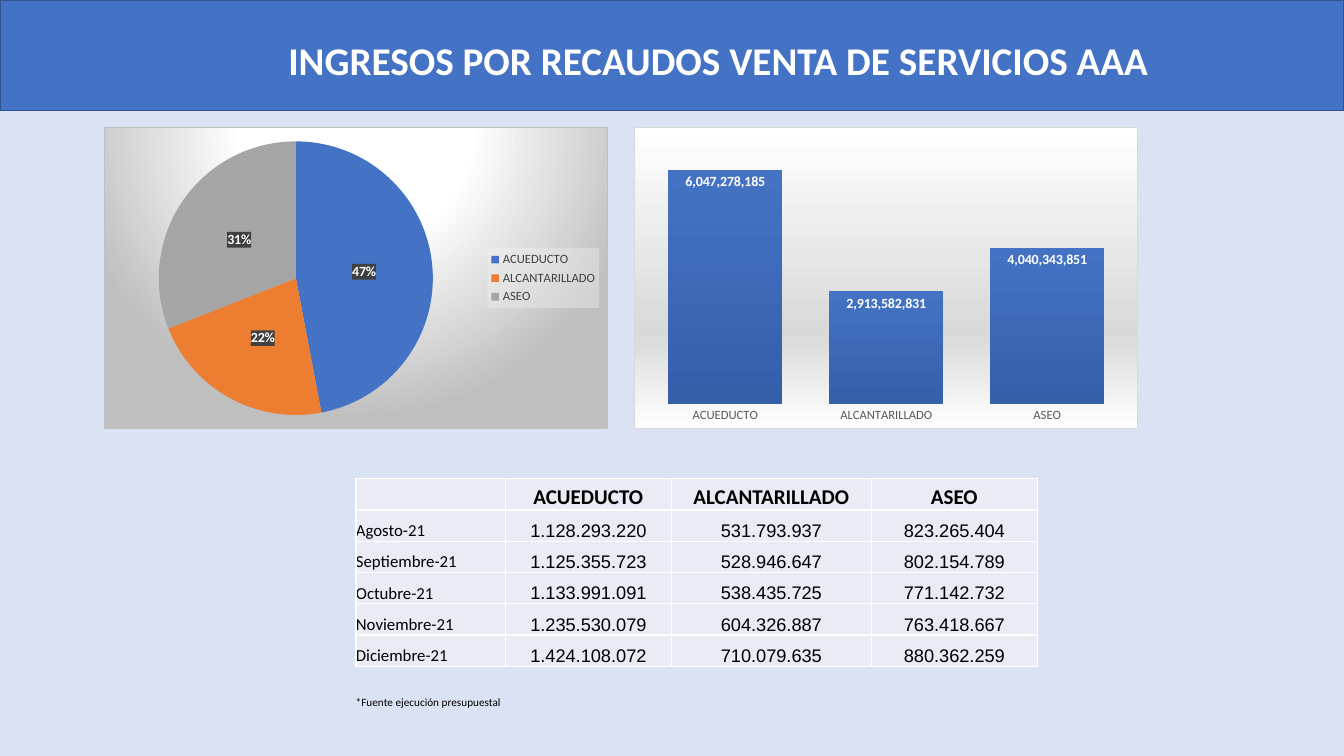
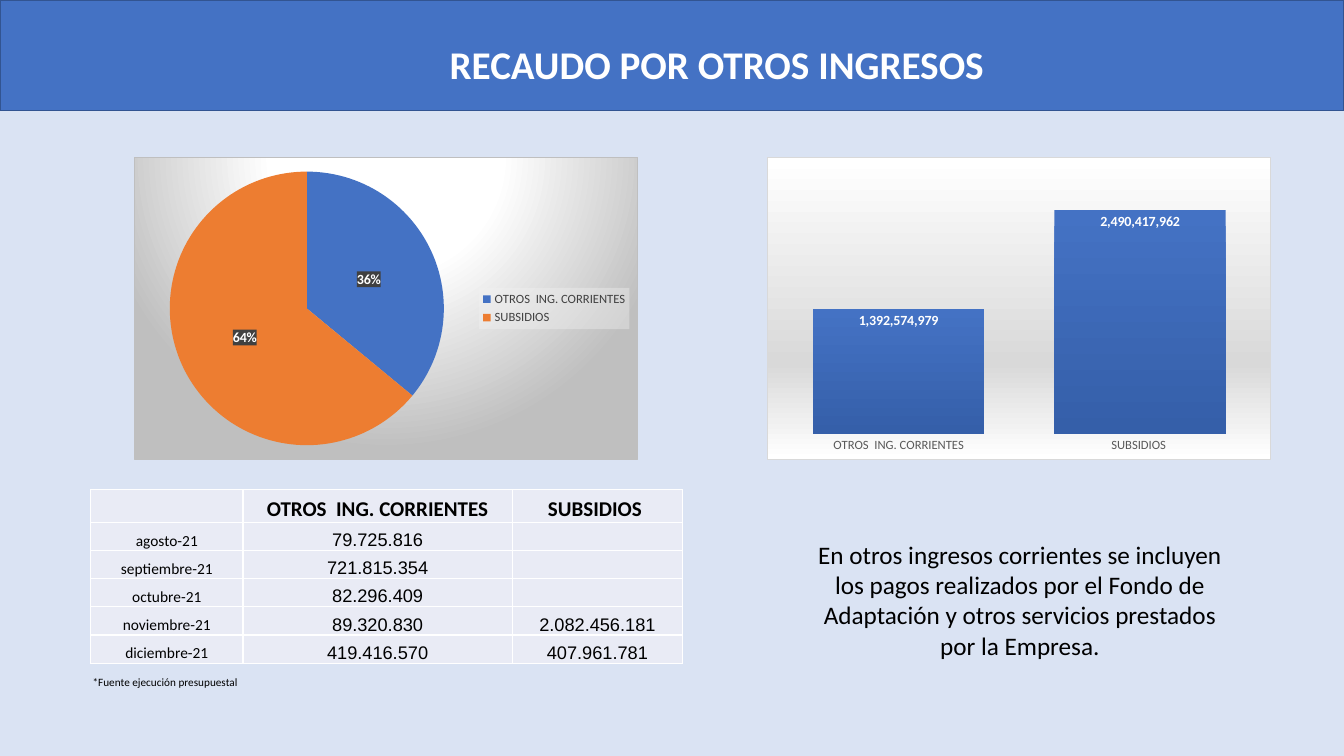
from dataclasses import dataclass, field
from typing import NamedTuple

from pptx import Presentation
from pptx import util as u
from pptx.chart import data as cd
from pptx.dml.color import RGBColor
from pptx.enum import chart as ch, shapes, text
from pptx.oxml import ns, parse_xml


@dataclass(frozen=True)
class Theme:
    font: str = "Calibri"
    figure_font: str = "Arial"
    page: str = "DAE3F3"
    band: str = "4472C4"
    band_line: str = "325491"
    bar_end: str = "355FA9"
    cell: str = "E9EBF5"
    white: str = "FFFFFF"
    black: str = "000000"
    axis_text: str = "595959"
    legend_text: str = "404040"
    legend_fill: str = "F2F2F2"
    label_fill: str = "404040"
    pie_edge: str = "BFBFBF"
    column_edge: str = "D9D9D9"
    slices: tuple[str, ...] = ("4472C4", "ED7D31", "A5A5A5")
    title_size: int = 28
    body_size: int = 18
    header_size: int = 15
    figure_size: int = 13
    label_size: int = 10
    axis_size: int = 9
    note_size: int = 8


class Box(NamedTuple):
    left: float
    top: float
    width: float
    height: float

    def emu(self) -> list[u.Length]:
        return [u.Inches(v) for v in self]


class MonthStyle(NamedTuple):
    size: int
    align: text.PP_ALIGN


@dataclass
class IncomeSlide:
    title: str
    title_box: Box
    concepts: list[str]
    shares: list[int]
    totals: list[int]
    axis_max: float
    pie_box: Box
    column_box: Box
    table_at: tuple[float, float]
    col_widths: list[float]
    row_heights: list[float]
    month_style: MonthStyle
    rows: list[list[str]]
    note_box: Box
    remark: str = ""
    remark_box: Box = field(default=Box(7.89, 5.3, 4.45, 1.31))


T = Theme()
SLIDE_W, SLIDE_H, BAND_H = 13.33, 7.5, 1.1
CHART_W, CHART_H = 5, 3
NOTE = "*Fuente ejecución presupuestal"

SLIDES = [
    IncomeSlide(
        title="INGRESOS POR RECAUDOS VENTA DE SERVICIOS AAA",
        title_box=Box(2.76, 0.31, 9.14, 0.57),
        concepts=["ACUEDUCTO", "ALCANTARILLADO", "ASEO"],
        shares=[47, 22, 31],
        totals=[6047278185, 2913582831, 4040343851],
        axis_max=7e9,
        pie_box=Box(1.03, 1.26, CHART_W, CHART_H),
        column_box=Box(6.29, 1.26, CHART_W, CHART_H),
        table_at=(3.53, 4.75),
        col_widths=[1.48, 1.65, 1.98, 1.65],
        row_heights=[0.31] * 6,
        month_style=MonthStyle(12, text.PP_ALIGN.LEFT),
        rows=[
            ["Agosto-21", "1.128.293.220", "531.793.937", "823.265.404"],
            ["Septiembre-21", "1.125.355.723", "528.946.647", "802.154.789"],
            ["Octubre-21", "1.133.991.091", "538.435.725", "771.142.732"],
            ["Noviembre-21", "1.235.530.079", "604.326.887", "763.418.667"],
            ["Diciembre-21", "1.424.108.072", "710.079.635", "880.362.259"],
        ],
        note_box=Box(3.43, 6.85, 1.66, 0.24),
    ),
    IncomeSlide(
        title="RECAUDO POR OTROS INGRESOS",
        title_box=Box(4.36, 0.35, 5.6, 0.57),
        concepts=["OTROS  ING. CORRIENTES", "SUBSIDIOS "],
        shares=[36, 64],
        totals=[1392574979, 2490417962],
        axis_max=3e9,
        pie_box=Box(1.33, 1.56, CHART_W, CHART_H),
        column_box=Box(7.61, 1.56, CHART_W, CHART_H),
        table_at=(0.9, 4.86),
        col_widths=[1.51, 2.67, 1.69],
        row_heights=[0.32] + [0.28] * 5,
        month_style=MonthStyle(11, text.PP_ALIGN.CENTER),
        rows=[
            ["agosto-21", "79.725.816", ""],
            ["septiembre-21", "721.815.354", ""],
            ["octubre-21", "82.296.409", ""],
            ["noviembre-21", "89.320.830", "2.082.456.181"],
            ["diciembre-21", "419.416.570", "407.961.781"],
        ],
        note_box=Box(0.82, 6.65, 1.66, 0.24),
        remark="En otros ingresos corrientes se incluyen los pagos realizados por el "
               "Fondo de Adaptación y otros servicios prestados por la Empresa.",
    ),
]


def rgb(color: str) -> RGBColor:
    return RGBColor.from_string(color)


def set_font(font, size: int, color: str, bold: bool = False, name: str = T.font) -> None:
    font.name, font.size, font.bold = name, u.Pt(size), bold
    font.color.rgb = rgb(color)


def solid_xml(color: str, alpha: int = 100) -> str:
    return f'<a:solidFill><a:srgbClr val="{color}"><a:alpha val="{alpha * 1000}"/></a:srgbClr></a:solidFill>'


def gradient_xml(stops: list[tuple[int, str]], direction: str) -> str:
    gs = "".join(f'<a:gs pos="{pos * 1000}"><a:srgbClr val="{color}"/></a:gs>' for pos, color in stops)
    return f'<a:gradFill rotWithShape="1"><a:gsLst>{gs}</a:gsLst>{direction}</a:gradFill>'


def paint_chart_part(chart, text_path: str, fill: str, border: str = "") -> None:
    line = f'<a:ln w="9525">{solid_xml(border)}</a:ln>' if border else ""
    sp_pr = parse_xml(f'<c:spPr {ns.nsdecls("c", "a")}>{fill}{line}</c:spPr>')
    chart.element.xpath(text_path)[0].addprevious(sp_pr)


def add_band_and_title(slide, title: str, box: Box) -> None:
    slide.background.fill.solid()
    slide.background.fill.fore_color.rgb = rgb(T.page)
    band = slide.shapes.add_shape(shapes.MSO_SHAPE.RECTANGLE, *Box(0, 0, SLIDE_W, BAND_H).emu())
    band.shadow.inherit = False
    band.fill.solid()
    band.fill.fore_color.rgb = rgb(T.band)
    band.line.color.rgb = rgb(T.band_line)
    band.line.width = u.Pt(1)
    sp = slide.shapes.title
    sp.element.addprevious(band.element)
    sp.left, sp.top, sp.width, sp.height = box.emu()
    tf = sp.text_frame
    tf.text = title
    tf.word_wrap = True
    tf.auto_size = text.MSO_AUTO_SIZE.NONE
    tf.vertical_anchor = text.MSO_ANCHOR.MIDDLE
    p = tf.paragraphs[0]
    p.alignment = text.PP_ALIGN.LEFT
    set_font(p.font, T.title_size, T.white, bold=True)


def add_text(slide, content: str, box: Box, size: int, align: text.PP_ALIGN) -> None:
    tf = slide.shapes.add_textbox(*box.emu()).text_frame
    tf.word_wrap = True
    tf.text = content
    p = tf.paragraphs[0]
    p.alignment = align
    set_font(p.font, size, T.black)


def add_income_table(slide, page: IncomeSlide) -> None:
    grid = [["", *page.concepts], *page.rows]
    box = Box(*page.table_at, sum(page.col_widths), sum(page.row_heights))
    frame = slide.shapes.add_table(len(grid), len(grid[0]), *box.emu())
    table = frame.table
    table.first_row = table.horz_banding = False
    for column, width in zip(table.columns, page.col_widths):
        column.width = u.Inches(width)
    for r, (row, height) in enumerate(zip(table.rows, page.row_heights)):
        row.height = u.Inches(height)
        for c, cell in enumerate(row.cells):
            cell.margin_left = cell.margin_right = cell.margin_top = cell.margin_bottom = 0
            cell.vertical_anchor = text.MSO_ANCHOR.BOTTOM
            cell.fill.solid()
            cell.fill.fore_color.rgb = rgb(T.cell)
            cell.text = grid[r][c]
            p = cell.text_frame.paragraphs[0]
            p.alignment = text.PP_ALIGN.CENTER
            if r == 0:
                set_font(p.font, T.header_size, T.black, bold=True)
            elif c == 0:
                p.alignment = page.month_style.align
                set_font(p.font, page.month_style.size, T.black)
            else:
                set_font(p.font, T.figure_size, T.black, name=T.figure_font)
    for tc_pr in frame.element.xpath(".//a:tcPr"):
        for i, side in enumerate(("lnL", "lnR", "lnT", "lnB")):
            line = f'<a:{side} {ns.nsdecls("a")} w="12700">{solid_xml(T.white)}</a:{side}>'
            tc_pr.insert(i, parse_xml(line))


def add_income_chart(slide, kind: ch.XL_CHART_TYPE, box: Box, concepts: list[str],
                     values: list[int], number_format: str, position: ch.XL_LABEL_POSITION):
    data = cd.CategoryChartData()
    data.categories = concepts
    data.add_series("Series 1", values)
    chart = slide.shapes.add_chart(kind, *box.emu(), data).chart
    chart.has_title = chart.has_legend = False
    set_font(chart.font, T.label_size, T.black)
    plot = chart.plots[0]
    plot.has_data_labels = True
    labels = plot.data_labels
    labels.number_format, labels.number_format_is_linked = number_format, False
    labels.position = position
    set_font(labels.font, T.label_size, T.white, bold=True)
    return chart


def add_share_pie(slide, page: IncomeSlide) -> None:
    chart = add_income_chart(slide, ch.XL_CHART_TYPE.PIE, page.pie_box, page.concepts,
                             page.shares, "0%", ch.XL_LABEL_POSITION.CENTER)
    plot = chart.plots[0]
    plot.vary_by_categories = True
    plot.data_labels.show_percentage = True
    plot.data_labels.show_value = False
    for i, color in enumerate(T.slices[:len(page.shares)]):
        fill = plot.series[0].points[i].format.fill
        fill.solid()
        fill.fore_color.rgb = rgb(color)
    chart.has_legend = True
    chart.legend.position = ch.XL_LEGEND_POSITION.RIGHT
    chart.legend.include_in_layout = False
    set_font(chart.legend.font, T.axis_size, T.legend_text)
    circle = '<a:path path="circle"><a:fillToRect l="50000" t="-80000" r="50000" b="180000"/></a:path>'
    area = gradient_xml([(0, T.white), (39, T.white), (100, T.pie_edge)], circle)
    paint_chart_part(chart, "c:txPr", area, T.pie_edge)
    paint_chart_part(chart, ".//c:legend/c:txPr", solid_xml(T.legend_fill, 39))
    paint_chart_part(chart, ".//c:dLbls/c:txPr", solid_xml(T.label_fill, 90))


def add_total_columns(slide, page: IncomeSlide) -> None:
    chart = add_income_chart(slide, ch.XL_CHART_TYPE.COLUMN_CLUSTERED, page.column_box, page.concepts,
                             page.totals, "#,##0", ch.XL_LABEL_POSITION.INSIDE_END)
    plot = chart.plots[0]
    plot.vary_by_categories = False
    plot.gap_width = 41
    plot.data_labels.show_value = True
    fill = plot.series[0].format.fill
    fill.gradient()
    fill.gradient_angle = 270
    for stop, position, color in zip(fill.gradient_stops, (0, 1), (T.band, T.bar_end)):
        stop.position = position
        stop.color.rgb = rgb(color)
    values = chart.value_axis
    values.minimum_scale, values.maximum_scale = 0, page.axis_max
    values.has_major_gridlines = values.visible = False
    names = chart.category_axis
    names.major_tick_mark = ch.XL_TICK_MARK.NONE
    names.format.line.fill.background()
    set_font(names.tick_labels.font, T.axis_size, T.axis_text)
    area = gradient_xml([(0, T.white), (68, T.column_edge), (100, T.white)], '<a:lin ang="5400000" scaled="0"/>')
    paint_chart_part(chart, "c:txPr", area, T.column_edge)


def main() -> None:
    prs = Presentation()
    prs.slide_width, prs.slide_height = u.Inches(SLIDE_W), u.Inches(SLIDE_H)
    for page in SLIDES:
        s = prs.slides.add_slide(prs.slide_layouts.get_by_name("Title Only"))
        add_band_and_title(s, page.title, page.title_box)
        add_income_table(s, page)
        if page.remark:
            add_text(s, page.remark, page.remark_box, T.body_size, text.PP_ALIGN.CENTER)
        add_text(s, NOTE, page.note_box, T.note_size, text.PP_ALIGN.LEFT)
        add_total_columns(s, page)
        add_share_pie(s, page)
    prs.save("out.pptx")


if __name__ == "__main__":
    main()
